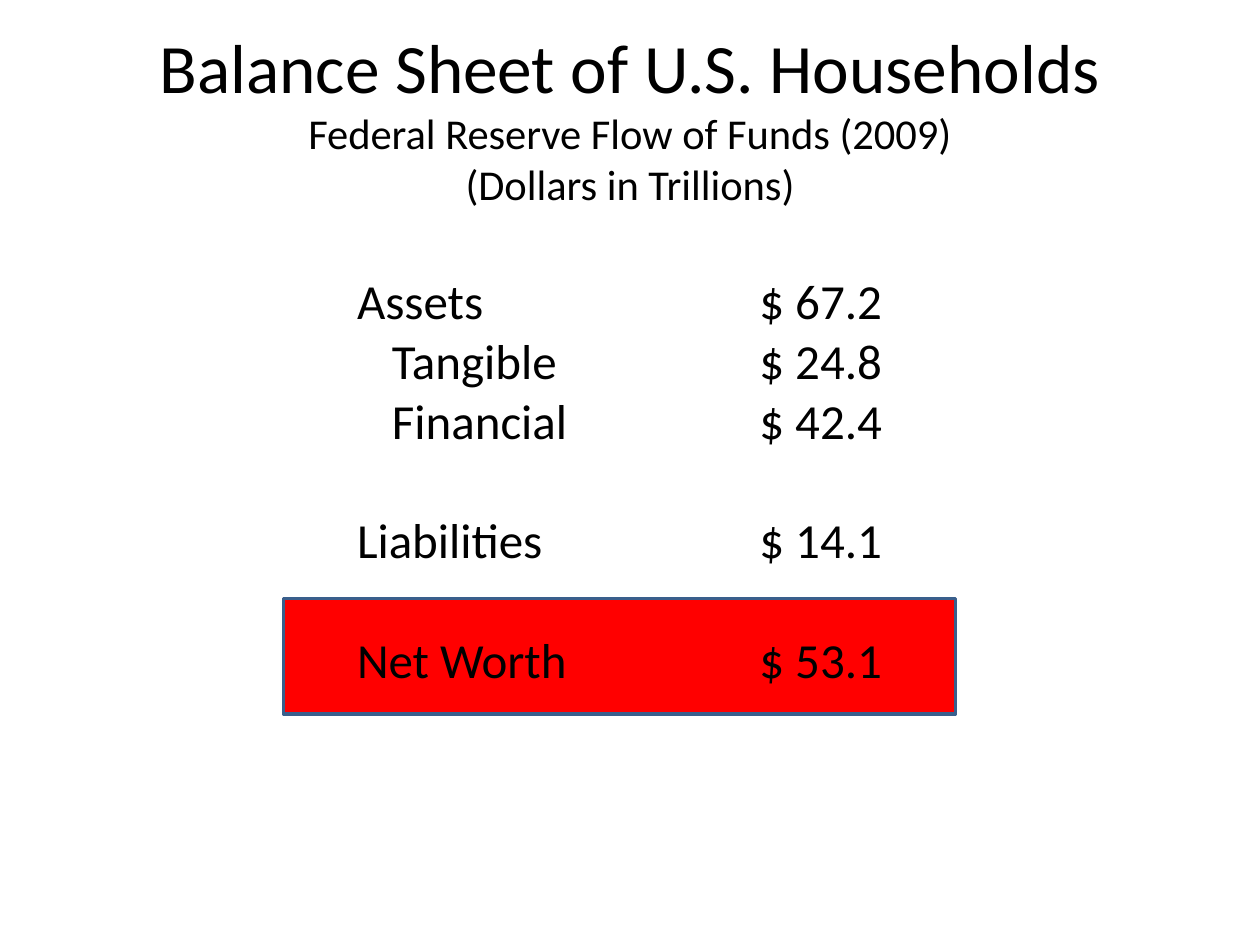
import pptx
import pptx.dml.color
import pptx.enum.shapes
import pptx.enum.text
import pptx.util

Pt = pptx.util.Pt
ALIGN = pptx.enum.text.PP_ALIGN
ANCHOR = pptx.enum.text.MSO_ANCHOR
COLORS = {"text": "000000", "highlight": "FF0000", "outline": "3A5F8C"}


def rgb(name):
    return pptx.dml.color.RGBColor.from_string(COLORS[name])


def add_run(paragraph, text, size):
    run = paragraph.add_run()
    run.text = text
    run.font.name = "Calibri"
    run.font.size = Pt(size)
    run.font.color.rgb = rgb("text")


presentation = pptx.Presentation()
presentation.slide_width = Pt(720)
presentation.slide_height = Pt(540)
slide = presentation.slides.add_slide(presentation.slide_layouts[6])

# Highlight behind the net worth row
highlight = slide.shapes.add_shape(
    pptx.enum.shapes.MSO_SHAPE.RECTANGLE, Pt(162), Pt(342), Pt(384), Pt(66))
highlight.shadow.inherit = False
highlight.fill.solid()
highlight.fill.fore_color.rgb = rgb("highlight")
highlight.line.color.rgb = rgb("outline")
highlight.line.width = Pt(2)

# Title with two smaller lines below it
title = slide.shapes.add_textbox(Pt(36), Pt(21.6), Pt(648), Pt(90))
title.text_frame.word_wrap = True
title.text_frame.vertical_anchor = ANCHOR.MIDDLE
paragraph = title.text_frame.paragraphs[0]
paragraph.alignment = ALIGN.CENTER
add_run(paragraph, "Balance Sheet of U.S. Households", 39.6)
for line in ("Federal Reserve Flow of Funds (2009)", "(Dollars in Trillions)"):
    paragraph.add_line_break()
    add_run(paragraph, line, 24.3)

# Balance sheet: label, amount, indent; None is an empty row
ROWS = [
    ("Assets", "$ 67.2", 0),
    ("Tangible", "$ 24.8", 20),
    ("Financial", "$ 42.4", 20),
    None,
    ("Liabilities", "$ 14.1", 0),
    None,
    ("Net Worth", "$ 53.1", 0),
]
ROW_HEIGHT = 34.2
frame = slide.shapes.add_table(
    len(ROWS), 2, Pt(204), Pt(156), Pt(300), Pt(ROW_HEIGHT * len(ROWS)))
table = frame.table
table.first_row = False
table.horz_banding = False
table.columns[0].width = Pt(193.5)
table.columns[1].width = Pt(106.5)

for row_index, entry in enumerate(ROWS):
    table.rows[row_index].height = Pt(ROW_HEIGHT)
    label, amount, indent = entry or ("", "", 0)
    for column, (text, left, alignment) in enumerate(
            [(label, indent, ALIGN.LEFT), (amount, 0, ALIGN.RIGHT)]):
        cell = table.cell(row_index, column)
        cell.fill.background()
        cell.vertical_anchor = ANCHOR.BOTTOM
        cell.margin_left = Pt(left)
        cell.margin_right = cell.margin_top = cell.margin_bottom = Pt(0)
        if text:
            paragraph = cell.text_frame.paragraphs[0]
            paragraph.alignment = alignment
            add_run(paragraph, text, 28)

# The plain "No Style, No Grid" table style leaves cells without borders
style_id = table._tbl.tblPr.find(pptx.oxml.ns.qn("a:tableStyleId"))
style_id.text = "{2D5ABB26-0587-4C30-8999-92F81FD0307C}"

presentation.save("out.pptx")
